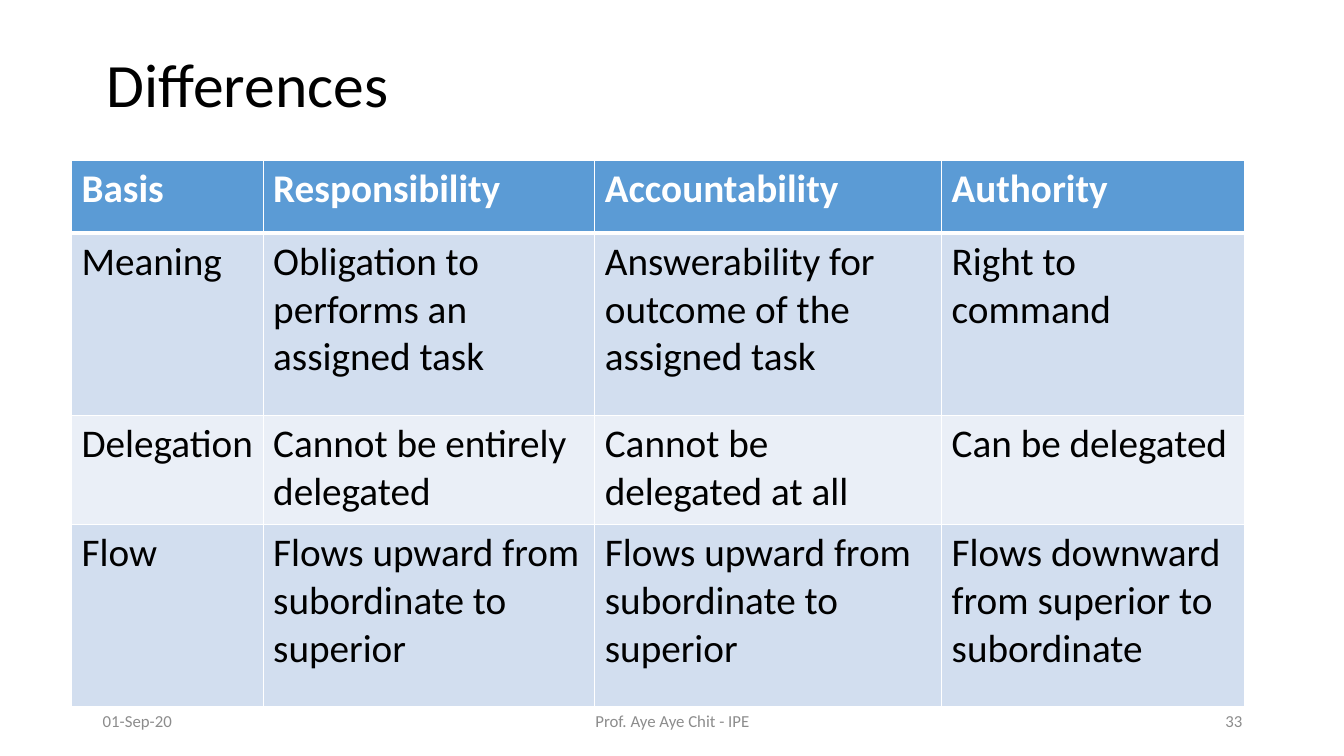
from lxml.etree import SubElement
from pptx import Presentation
from pptx.dml.color import RGBColor as RGB
from pptx.enum.text import MSO_ANCHOR as Anchor, MSO_AUTO_SIZE as AutoSize, PP_ALIGN as Align
from pptx.oxml.ns import qn
from pptx.util import Inches, Pt

THEME = {
    "font": "Calibri",
    "title": {"size": Pt(44), "color": "000000", "bold": False},
    "header": {"size": Pt(28), "color": "FFFFFF", "bold": True},
    "body": {"size": Pt(28), "color": "000000", "bold": False},
    "footer": {"size": Pt(12), "color": "8C8C8C", "bold": False},
    "header_fill": "5B9BD5",
    "band_fills": ("EAEFF7", "D2DEEF"),
    "rule": "FFFFFF",
}


def write(frame, words, style, align=Align.LEFT):
    """Put one paragraph in a text frame, in a style of the theme."""
    frame.text = words
    paragraph = frame.paragraphs[0]
    paragraph.alignment = align
    font = paragraph.runs[0].font
    look = THEME[style]
    for key, value in {"name": THEME["font"], "size": look["size"], "bold": look["bold"]}.items():
        setattr(font, key, value)
    font.color.rgb = RGB.from_string(look["color"])
    return paragraph


def rule_cell(cell, widths):
    """Draw the cell's borders; widths maps a side to points."""
    properties = cell._tc.get_or_add_tcPr()
    for side, points in widths.items():
        line = SubElement(properties, qn(f"a:ln{side}"), w=str(Pt(points)))
        SubElement(SubElement(line, qn("a:solidFill")), qn("a:srgbClr"), val=THEME["rule"])


deck = Presentation()
deck.slide_width, deck.slide_height = Inches(13.33), Inches(7.5)
slide = deck.slides.add_slide(deck.slide_layouts[5])

# Title
title = slide.shapes.title
title.left, title.top, title.width, title.height = map(Inches, (0.96, 0.14, 11.5, 1.45))
title.text_frame.auto_size = AutoSize.NONE
title.text_frame.vertical_anchor = Anchor.MIDDLE
write(title.text_frame, "Differences", "title").line_spacing = 0.9

# Comparison table
comparison = [
    ("Basis", "Responsibility", "Accountability", "Authority"),
    ("Meaning", "Obligation to performs an assigned task",
     "Answerability for outcome of the assigned task", "Right to command"),
    ("Delegation", "Cannot be entirely delegated", "Cannot be delegated at all", "Can be delegated"),
    ("Flow", "Flows upward from subordinate to superior",
     "Flows upward from subordinate to superior", "Flows downward from superior to subordinate"),
]
column_widths = (1.9, 3.29, 3.44, 3)
row_heights = (0.72, 1.81, 1.08, 1.81)
table = slide.shapes.add_table(
    len(row_heights), len(column_widths), Inches(0.71), Inches(1.59),
    Inches(sum(column_widths)), Inches(sum(row_heights))).table
for column, width in zip(table.columns, column_widths):
    column.width = Inches(width)

for r, (entries, height) in enumerate(zip(comparison, row_heights)):
    table.rows[r].height = Inches(height)
    fill = THEME["band_fills"][r % 2] if r else THEME["header_fill"]
    for c, entry in enumerate(entries):
        cell = table.cell(r, c)
        rule_cell(cell, {"L": 1, "R": 1, "T": 3 if r == 1 else 1, "B": 3 if r == 0 else 1})
        cell.fill.solid()
        cell.fill.fore_color.rgb = RGB.from_string(fill)
        write(cell.text_frame, entry, "body" if r else "header")

# Footer: date, author, slide number
for words, left, width, align in (
    ("01-Sep-20", 0.92, 3, Align.LEFT),
    ("Prof. Aye Aye Chit - IPE", 4.42, 4.5, Align.CENTER),
    ("33", 9.42, 3, Align.RIGHT),
):
    footer = slide.shapes.add_textbox(*map(Inches, (left, 6.95, width, 0.4))).text_frame
    footer.word_wrap = True
    footer.vertical_anchor = Anchor.MIDDLE
    write(footer, words, "footer", align)

deck.save("out.pptx")
